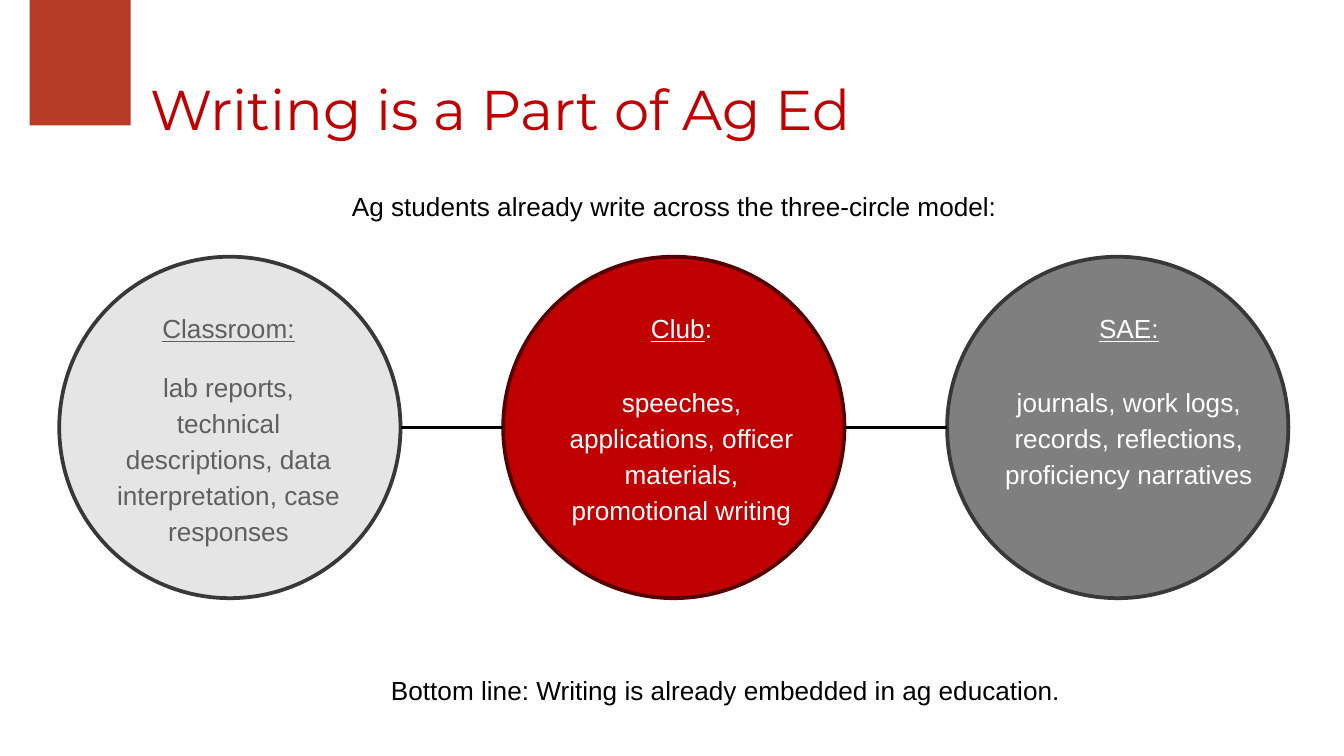
"""Build the slide on writing across the three-circle model."""
from lxml.etree import SubElement
from pptx import Presentation
from pptx.dml.color import RGBColor
from pptx.enum.shapes import MSO_CONNECTOR, MSO_SHAPE
from pptx.enum.text import MSO_ANCHOR, MSO_AUTO_SIZE, PP_ALIGN
from pptx.oxml.ns import qn
from pptx.util import Cm, Pt

HUES = {
    "brick": "B73C26", "red": "C00000", "maroon": "540000",
    "pale": "E5E5E5", "grey": "7F7F7F", "dark": "383838",
    "text": "5F5F5F", "white": "FFFFFF", "black": "000000",
}


def hue(name):
    """Return the named colour."""
    return RGBColor.from_string(HUES[name])


def write(par, text, color, size=14, face="Arial", under=False):
    """Add one formatted run to a paragraph."""
    run = par.add_run()
    run.text = text
    run.font.size = Pt(size)
    run.font.name = face
    run.font.underline = under
    run.font.color.rgb = hue(color)


deck = Presentation()
deck.slide_width, deck.slide_height = Cm(25.4), Cm(14.28)
slide = deck.slides.add_slide(deck.slide_layouts[5])
shapes = slide.shapes

title = shapes.title
title.left, title.top = Cm(0), Cm(1.35)
title.width, title.height = Cm(23.67), Cm(1.6)
frame = title.text_frame
frame.word_wrap = True
frame.auto_size = MSO_AUTO_SIZE.NONE
frame.vertical_anchor = MSO_ANCHOR.MIDDLE
frame.margin_left, frame.margin_right = Cm(2.84), Cm(1.73)
frame.margin_top, frame.margin_bottom = Cm(0.18), Cm(0.38)
par = frame.paragraphs[0]
par.alignment = PP_ALIGN.LEFT
write(par, "Writing is a Part of Ag Ed", "red", 30, "Montserrat")

block = shapes.add_shape(MSO_SHAPE.RECTANGLE, Cm(0.56), Cm(-0.03), Cm(1.91), Cm(2.4))
block.shadow.inherit = False
block.fill.solid()
block.fill.fore_color.rgb = hue("brick")
block.line.fill.background()

SIZE, STEP, LEFT, TOP = 6.45, 8.39, 1.12, 4.85
circles = [
    ("pale", "dark", "text", 1.45, 5.36, 12, [("Classroom:", True)],
     "lab reports, technical descriptions, data interpretation, case responses"),
    ("red", "maroon", "white", 10.01, 5.36, 20, [("Club", True), (":", False)],
     "speeches, applications, officer materials, promotional writing"),
    ("grey", "dark", "white", 18.11, 6.07, 20, [("SAE:", True)],
     "journals, work logs, records, reflections, proficiency narratives"),
]
for i, (fill, edge, ink, left, width, gap, head, body) in enumerate(circles):
    disc = shapes.add_shape(
        MSO_SHAPE.OVAL, Cm(LEFT + i * STEP), Cm(TOP), Cm(SIZE), Cm(SIZE))
    disc.shadow.inherit = False
    disc.fill.solid()
    disc.fill.fore_color.rgb = hue(fill)
    disc.line.color.rgb = hue(edge)
    disc.line.width = Pt(2)

    frame = shapes.add_textbox(Cm(left), Cm(5.69), Cm(width), Cm(4.75)).text_frame
    frame.word_wrap = True
    pars = [frame.paragraphs[0], frame.add_paragraph()]
    for par in pars:
        par.alignment = PP_ALIGN.CENTER
        par.line_spacing = 1.15
        par._p.get_or_add_pPr().set("marL", str(Cm(0.38)))
    pars[1].space_before = Pt(gap)
    for text, under in head:
        write(pars[0], text, ink, under=under)
    write(pars[1], body, ink)

notes = [
    (4.6, 12.52, 16.28, 2.54, "Bottom line: Writing is already embedded in ag education."),
    (6.4, 3.38, 12.7, 0, "Ag students already write across the three-circle model:"),
]
for left, top, width, indent, text in notes:
    frame = shapes.add_textbox(Cm(left), Cm(top), Cm(width), Cm(0.89)).text_frame
    frame.word_wrap = True
    par = frame.paragraphs[0]
    par.line_spacing = 1.15
    par._p.get_or_add_pPr().set("marL", str(Cm(indent)))
    write(par, text, "black")

for i in range(2):
    start, mid = LEFT + SIZE + i * STEP, TOP + SIZE / 2
    link = shapes.add_connector(
        MSO_CONNECTOR.STRAIGHT, Cm(start), Cm(mid), Cm(start + STEP - SIZE), Cm(mid))
    link.line.color.rgb = hue("black")
    link.line.width = Pt(1.5)
    SubElement(link._element.spPr, qn("a:effectLst"))

deck.save("out.pptx")
